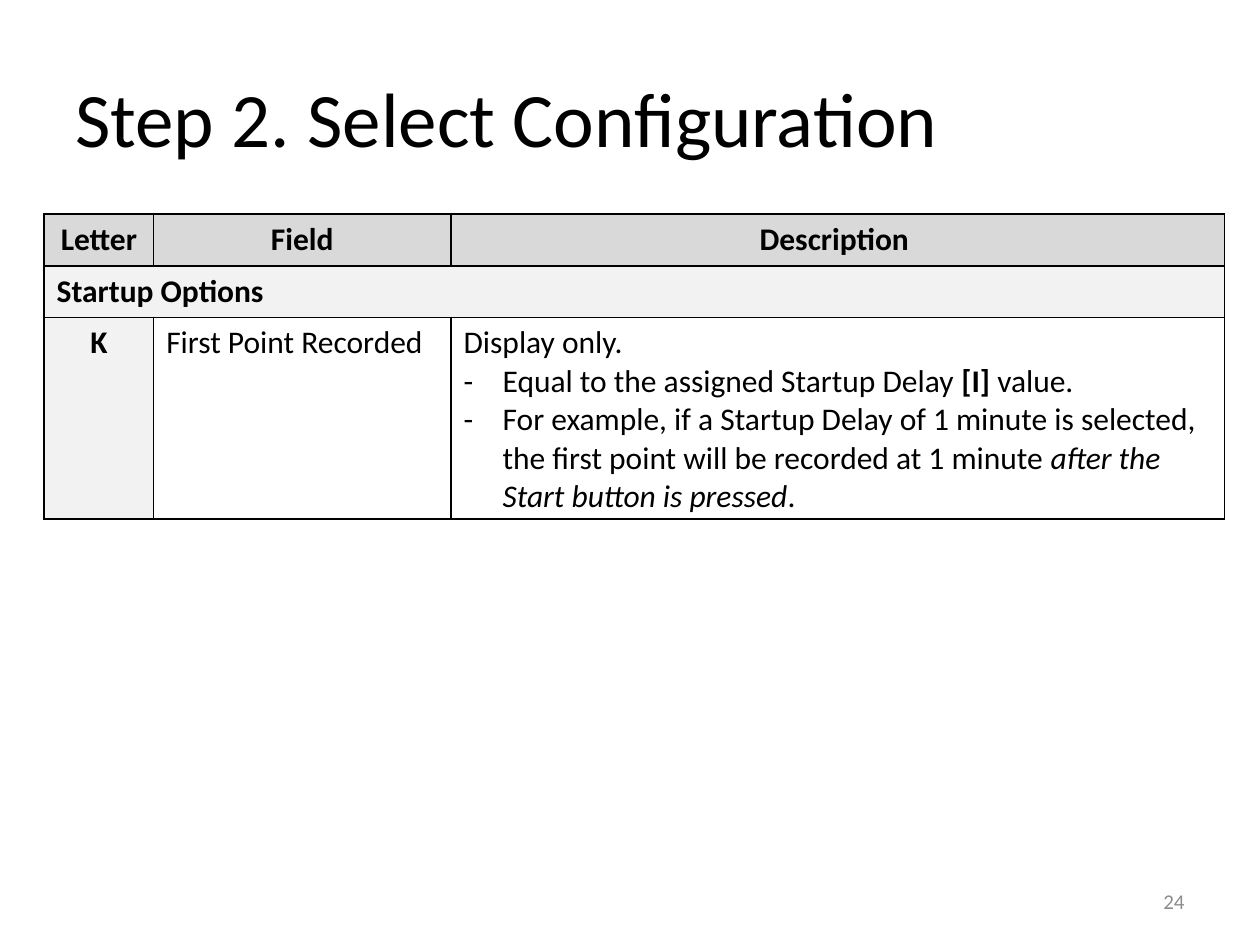
from lxml import etree
from pptx import Presentation
from pptx.dml.color import RGBColor
from pptx.enum.text import MSO_ANCHOR, PP_ALIGN
from pptx.oxml.ns import qn
from pptx.util import Inches, Pt

LEFT, CENTER, RIGHT = PP_ALIGN.LEFT, PP_ALIGN.CENTER, PP_ALIGN.RIGHT
MIDDLE = MSO_ANCHOR.MIDDLE
BLACK, GREY = "000000", "8C8C8C"
HEADER_FILL, LABEL_FILL = "D9D9D9", "F2F2F2"
COLUMNS = (0.87, 2.36, 6.14)
ROWS = (0.41, 0.41, 1.6)
BOLD, ITALIC = {"bold": True}, {"italic": True}

DESCRIPTION = [
    [("Display only.", {})],
    [("Equal to the assigned Startup Delay ", {}), ("[I] ", BOLD), ("value.", {})],
    [("For example, if a Startup Delay of 1 minute is selected, the first point "
      "will be recorded at 1 minute ", {}),
     ("after the Start button is pressed", ITALIC), (".", {})],
]


def rgb(value):
    return RGBColor.from_string(value)


def add_runs(p, runs, size=18, color=BLACK, align=LEFT):
    p.alignment = align
    for text, style in runs:
        r = p.add_run()
        r.text = text
        r.font.color.rgb = rgb(color)
        font = {"name": "Calibri", "size": Pt(size), "bold": False, "italic": False}
        for name, value in (font | style).items():
            setattr(r.font, name, value)


def add_text(slide, box, text, **style):
    tf = slide.shapes.add_textbox(*map(Inches, box)).text_frame
    tf.word_wrap = True
    tf.vertical_anchor = MIDDLE
    add_runs(tf.paragraphs[0], [(text, {})], **style)


def set_dash(p):
    """Give a paragraph a hanging dash bullet."""
    pPr = p._p.get_or_add_pPr()
    pPr.set("marL", str(Inches(0.31)))
    pPr.set("indent", str(Inches(-0.31)))
    etree.SubElement(pPr, qn("a:buFont"), typeface="Calibri")
    etree.SubElement(pPr, qn("a:buChar"), char="-")


def set_borders(cell):
    tcPr = cell._tc.get_or_add_tcPr()
    for i, side in enumerate(("lnL", "lnR", "lnT", "lnB")):
        ln = etree.Element(qn(f"a:{side}"), w=str(Pt(1)))
        fill = etree.SubElement(ln, qn("a:solidFill"))
        etree.SubElement(fill, qn("a:srgbClr"), val=BLACK)
        tcPr.insert(i, ln)


def fill_cell(cell, paragraphs, fill=None, align=LEFT):
    """Write the paragraphs; those after the first are dash bullets."""
    if fill:
        cell.fill.solid()
        cell.fill.fore_color.rgb = rgb(fill)
    tf = cell.text_frame
    for i, runs in enumerate(paragraphs):
        p = tf.add_paragraph() if i else tf.paragraphs[0]
        add_runs(p, runs, align=align)
        if i:
            set_dash(p)


def add_field_table(slide):
    frame = slide.shapes.add_table(len(ROWS), len(COLUMNS), Inches(0.35), Inches(1.7),
                                   Inches(sum(COLUMNS)), Inches(sum(ROWS)))
    table = frame.table
    for column, width in zip(table.columns, COLUMNS):
        column.width = Inches(width)
    for row, height in zip(table.rows, ROWS):
        row.height = Inches(height)
    for cell in table.iter_cells():
        cell.fill.background()
        set_borders(cell)
    table.cell(1, 0).merge(table.cell(1, 2))

    for i, heading in enumerate(("Letter", "Field", "Description ")):
        fill_cell(table.cell(0, i), [[(heading, BOLD)]], HEADER_FILL, CENTER)
    fill_cell(table.cell(1, 0), [[("Startup Options", BOLD)]], LABEL_FILL)
    fill_cell(table.cell(2, 0), [[("K", BOLD)]], LABEL_FILL, CENTER)
    fill_cell(table.cell(2, 1), [[("First Point Recorded", {})]])
    fill_cell(table.cell(2, 2), DESCRIPTION)


def main():
    prs = Presentation()
    prs.slide_width, prs.slide_height = Inches(10), Inches(7.5)
    slide = prs.slides.add_slide(prs.slide_layouts[6])
    add_text(slide, (0.5, 0.3, 9, 1.25), "Step 2. Select Configuration", size=44)
    add_field_table(slide)
    add_text(slide, (7.17, 6.95, 2.33, 0.4), "24", size=12, color=GREY, align=RIGHT)
    prs.save("out.pptx")


if __name__ == "__main__":
    main()
